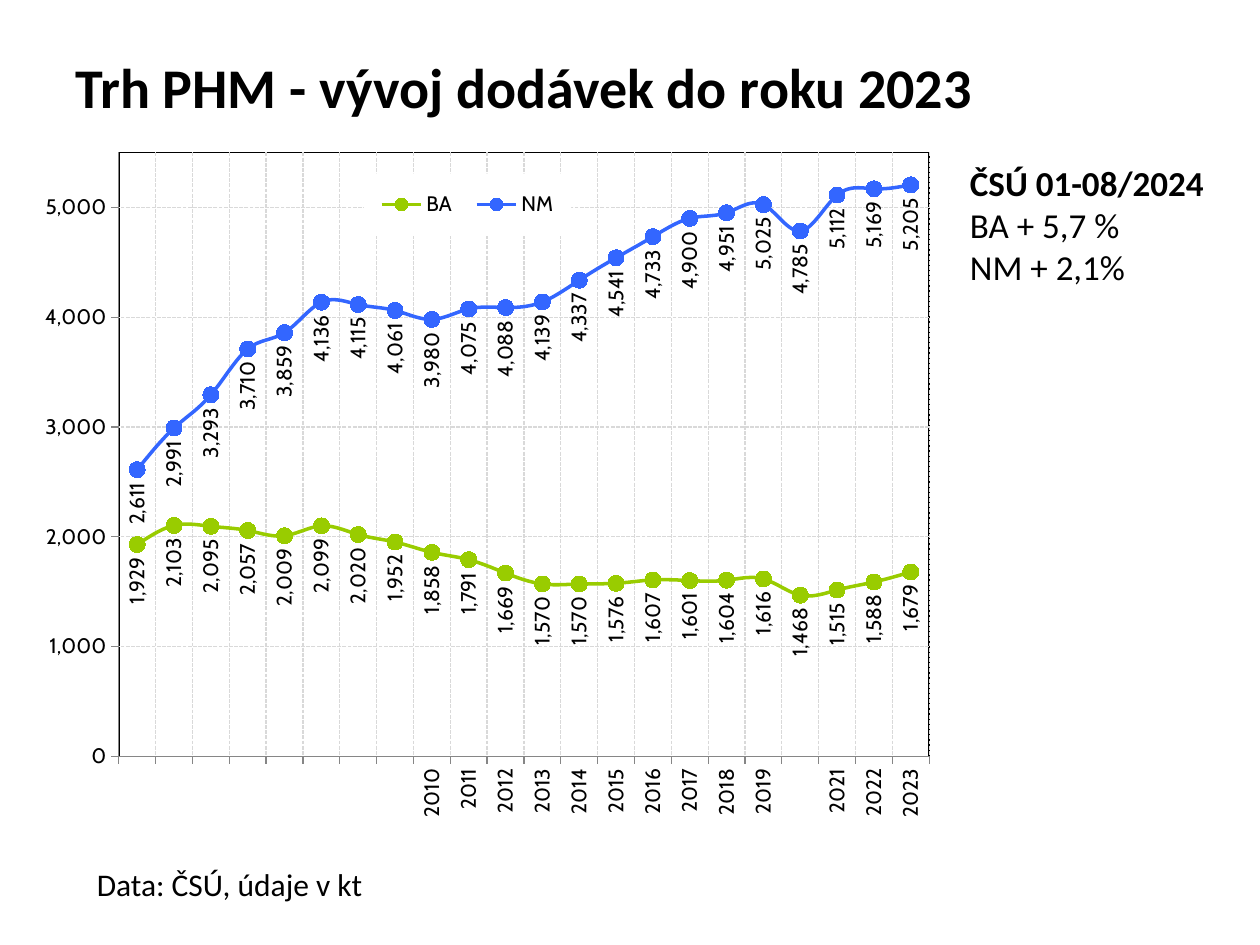
"""Build the slide on fuel market deliveries up to 2023."""
from pptx import Presentation
from pptx.chart.data import CategoryChartData
from pptx.dml.color import RGBColor
from pptx.enum.chart import (XL_CHART_TYPE, XL_LABEL_POSITION, XL_LEGEND_POSITION,
                             XL_MARKER_STYLE, XL_TICK_MARK)
from pptx.enum.dml import MSO_LINE
from pptx.enum.text import MSO_ANCHOR
from pptx.oxml import parse_xml
from pptx.oxml.ns import nsdecls, qn
from pptx.util import Inches, Pt

HUES = {"text": "000000", "grid": "D9D9D9", "axis": "868686", "back": "FFFFFF",
        "BA": "99CC00", "NM": "3366FF", "BA dot": "99CC00", "NM dot": "0000FF"}
DATA = {
    "BA": [1929, 2103, 2095, 2057, 2009, 2099, 2020, 1952, 1858, 1791, 1669,
           1570, 1570, 1576, 1607, 1601, 1604, 1616, 1468, 1515, 1588, 1679],
    "NM": [2611, 2991, 3293, 3710, 3859, 4136, 4115, 4061, 3980, 4075, 4088,
           4139, 4337, 4541, 4733, 4900, 4951, 5025, 4785, 5112, 5169, 5205],
}
TEXTS = [
    ((0.5, 0.3, 9, 0.77), 32, MSO_ANCHOR.MIDDLE,
     [("Trh PHM - vývoj dodávek do roku 2023", True)]),
    ((0.67, 6.82, 6.61, 0.4), 18, MSO_ANCHOR.TOP, [("Data: ČSÚ, údaje v kt", False)]),
    ((7.6, 1.23, 2.13, 1.11), 20, MSO_ANCHOR.TOP,
     [("ČSÚ 01-08/2024", True), ("BA + 5,7 %", False), ("NM + 2,1%", False)]),
]


def style(font, size, name):
    font.size = Pt(size)
    font.name = name
    font.color.rgb = RGBColor.from_string(HUES["text"])


def place(node, spot, box, inner=""):
    for old in node.findall(qn("c:layout")):
        node.remove(old)
    parts = "".join(f'<c:{key} val="{val}"/>' for key, val in zip("xywh", box))
    node.insert(spot, parse_xml(
        f'<c:layout {nsdecls("c")}><c:manualLayout>{inner}<c:xMode val="edge"/>'
        f'<c:yMode val="edge"/>{parts}</c:manualLayout></c:layout>'))


deck = Presentation()
deck.slide_width, deck.slide_height = Inches(10), Inches(7.5)
slide = deck.slides.add_slide(deck.slide_layouts[6])

for box, size, anchor, lines in TEXTS:
    frame = slide.shapes.add_textbox(*map(Inches, box)).text_frame
    frame.word_wrap = True
    frame.vertical_anchor = anchor
    for i, (words, bold) in enumerate(lines):
        para = frame.add_paragraph() if i else frame.paragraphs[0]
        run = para.add_run()
        run.text = words
        run.font.bold = bold
        style(run.font, size, "Calibri")

data = CategoryChartData(number_format="#,##0")
data.categories = [str(year) for year in range(2002, 2024)]
for name, vals in DATA.items():
    data.add_series(name, vals)
chart = slide.shapes.add_chart(XL_CHART_TYPE.LINE_MARKERS, Inches(0.12), Inches(0.99),
                               Inches(7.48), Inches(5.51), data).chart
style(chart.font, 10, "Cabin")
chart.has_title = False

for axis in (chart.category_axis, chart.value_axis):
    axis.major_tick_mark = XL_TICK_MARK.OUTSIDE
    axis.minor_tick_mark = XL_TICK_MARK.NONE
    axis.format.line.width = Pt(0.75)
    axis.format.line.color.rgb = RGBColor.from_string(HUES["axis"])
    axis.has_major_gridlines = True
    grid = axis.major_gridlines.format.line
    grid.width = Pt(0.75)
    grid.color.rgb = RGBColor.from_string(HUES["grid"])
    grid.dash_style = MSO_LINE.SQUARE_DOT
    style(axis.tick_labels.font, 12, "Cabin")
scale = chart.value_axis
scale.minimum_scale, scale.maximum_scale, scale.major_unit = 0, 5500, 1000
scale.tick_labels.number_format = "#,##0"
scale.tick_labels.number_format_is_linked = False

turned = [chart.category_axis._element]
for line in chart.plots[0].series:
    line.smooth = True
    hue = RGBColor.from_string(HUES[line.name])
    line.format.line.width = Pt(2)
    line.format.line.color.rgb = hue
    dot = line.marker
    dot.style, dot.size = XL_MARKER_STYLE.CIRCLE, 9
    dot.format.fill.solid()
    dot.format.fill.fore_color.rgb = RGBColor.from_string(HUES[line.name + " dot"])
    dot.format.line.color.rgb = hue
    tags = line.data_labels
    tags.show_value = True
    tags.position = XL_LABEL_POSITION.BELOW
    tags.number_format = "#,##0"
    tags.number_format_is_linked = False
    style(tags.font, 12, "Cabin")
    turned.append(tags._element)
for node in turned:
    body = node.find(qn("c:txPr")).find(qn("a:bodyPr"))
    body.set("rot", "-5400000")
    body.set("vert", "horz")

chart.has_legend = True
key = chart.legend
key.position = XL_LEGEND_POSITION.RIGHT
key.include_in_layout = True
style(key.font, 12, "Cabin")
place(key._element, 1, (0.37, 0.07, 0.22, 0.09))
fill = f'<a:solidFill><a:srgbClr val="{HUES["back"]}"/></a:solidFill>'
key._element.find(qn("c:txPr")).addprevious(
    parse_xml(f'<c:spPr {nsdecls("c", "a")}>{fill}</c:spPr>'))

plot = chart._chartSpace.chart.plotArea
place(plot, 0, (0.11, 0.04, 0.86, 0.87), '<c:layoutTarget val="inner"/>')
plot.append(parse_xml(
    f'<c:spPr {nsdecls("c", "a")}>{fill}<a:ln w="12700"><a:solidFill>'
    f'<a:srgbClr val="{HUES["text"]}"/></a:solidFill></a:ln></c:spPr>'))

deck.save("out.pptx")
